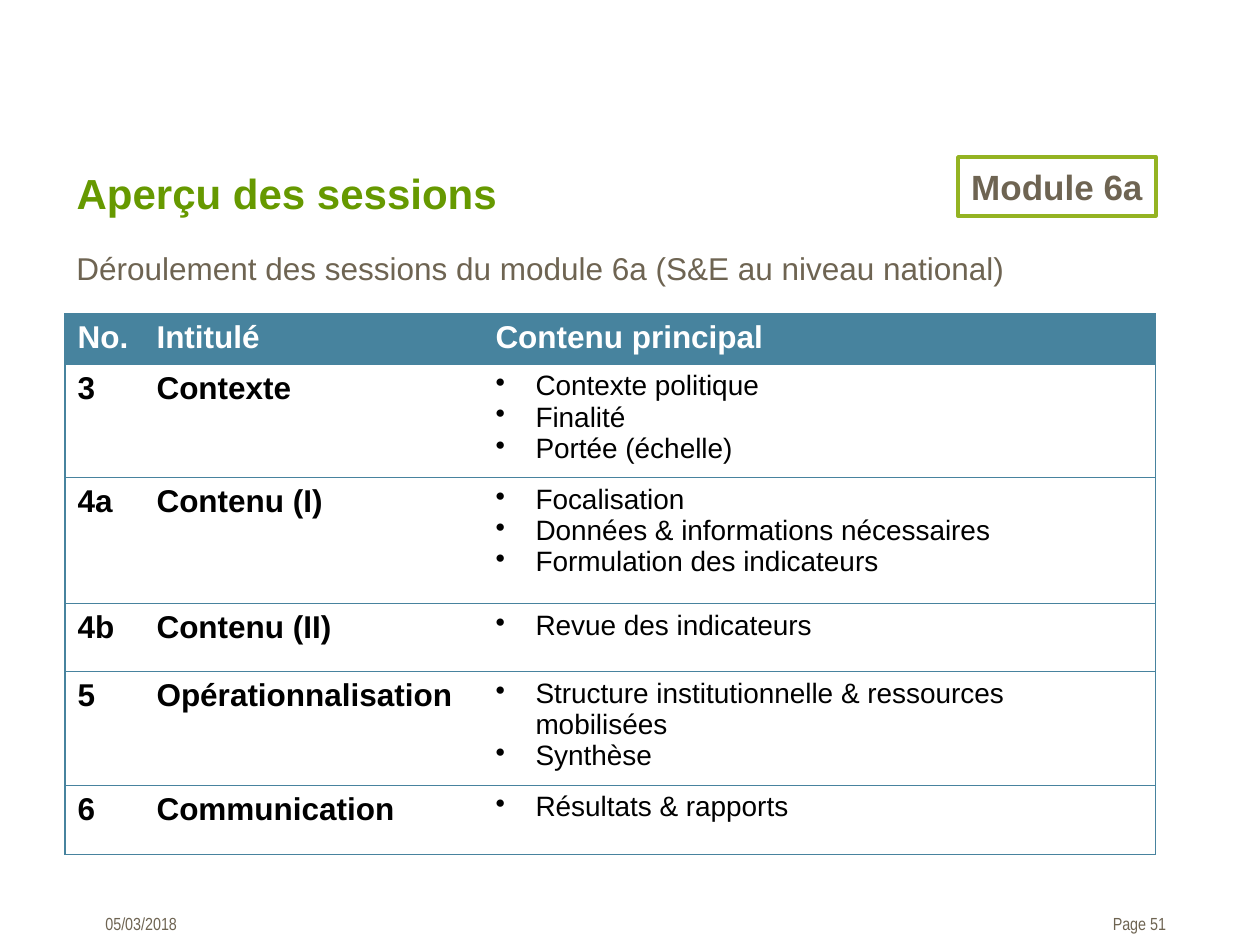
import pptx
import pptx.util
import pptx.dml.color
import pptx.enum.text
import pptx.enum.shapes
import pptx.oxml
import pptx.oxml.ns

PX = 914400 / 126
GREEN, GREY, TEAL = "669900", "6E6452", "47839E"
ALIGN = pptx.enum.text.PP_ALIGN
ANCHOR = pptx.enum.text.MSO_ANCHOR


def rgb(code):
    return pptx.dml.color.RGBColor.from_string(code)


def style(frame, size, color, bold=False, face="Arial", align=ALIGN.LEFT):
    frame.word_wrap = True
    for para in frame.paragraphs:
        para.alignment = align
        for run in para.runs:
            run.font.size = pptx.util.Pt(size)
            run.font.bold = bold
            run.font.name = face
            run.font.color.rgb = rgb(color)


deck = pptx.Presentation()
deck.slide_width = pptx.util.Inches(10)
deck.slide_height = pptx.util.Inches(7.5)
slide = deck.slides.add_slide(deck.slide_layouts[5])

title = slide.shapes.title
title.left, title.top, title.width, title.height = [
    round(n * PX) for n in (64, 161, 735, 63)]
title.text_frame.text = "Aperçu des sessions"
title.text_frame.vertical_anchor = ANCHOR.TOP
style(title.text_frame, 24, GREEN, bold=True)

# Text, box in px, size, font, alignment
labels = [
    ("Déroulement des sessions du module 6a (S&E au niveau national)",
     (64, 243, 1091, 51), 18, "Arial", ALIGN.LEFT),
    ("05/03/2018", (93, 907, 179, 34), 10, "Arial Narrow", ALIGN.LEFT),
    ("Page 51", (1038, 907, 128, 34), 10, "Arial Narrow", ALIGN.RIGHT),
]
for text, box, size, face, align in labels:
    label = slide.shapes.add_textbox(*[round(n * PX) for n in box])
    label.text_frame.text = text
    style(label.text_frame, size, GREY, face=face, align=align)
    if align == ALIGN.RIGHT:
        label.text_frame.margin_right = 0

badge = slide.shapes.add_shape(
    pptx.enum.shapes.MSO_SHAPE.RECTANGLE,
    *[round(n * PX) for n in (958, 157, 198, 59)])
badge.shadow.inherit = False
badge.fill.solid()
badge.fill.fore_color.rgb = rgb("FFFFFF")
badge.line.color.rgb = rgb("94B322")
badge.line.width = pptx.util.Pt(2)
badge.text_frame.text = "Module 6a"
badge.text_frame.vertical_anchor = ANCHOR.MIDDLE
style(badge.text_frame, 20, GREY, bold=True, align=ALIGN.CENTER)

rows = [
    ("No.", "Intitulé", "Contenu principal"),
    ("3", "Contexte", "Contexte politique\nFinalité\nPortée (échelle)"),
    ("4a", "Contenu (I)", "Focalisation\nDonnées & informations nécessaires\n"
     "Formulation des indicateurs"),
    ("4b", "Contenu (II)", "Revue des indicateurs"),
    ("5", "Opérationnalisation",
     "Structure institutionnelle & ressources mobilisées\nSynthèse"),
    ("6", "Communication", "Résultats & rapports"),
]
widths = [79, 339, 673]
heights = [50, 113, 126, 68, 93, 69]
frame = slide.shapes.add_table(
    len(rows), len(widths),
    *[round(n * PX) for n in (65, 314, sum(widths), sum(heights))])
table = frame.table
table.horz_banding = False
# Plain table style, without grid
mark = table._tbl.tblPr.find(pptx.oxml.ns.qn("a:tableStyleId"))
mark.text = "{2D5ABB26-0587-4C30-8999-92F81FD0307C}"
for col, width in zip(table.columns, widths):
    col.width = round(width * PX)
for row, height in zip(table.rows, heights):
    row.height = round(height * PX)

for r, texts in enumerate(rows):
    for c, text in enumerate(texts):
        cell = table.cell(r, c)
        cell.text_frame.text = text
        head, items = r == 0, r > 0 and c == 2
        if items:
            for para in cell.text_frame.paragraphs:
                props = para._p.get_or_add_pPr()
                props.set("marL", str(round(40 * PX)))
                props.set("indent", str(round(-40 * PX)))
                props.append(pptx.oxml.parse_xml(
                    f'<a:buChar {pptx.oxml.ns.nsdecls("a")} char="•"/>'))
        style(cell.text_frame, 16 if items else 18,
              "FFFFFF" if head else "000000", bold=not items)
        sides = ["L"] * (c == 0) + ["R"] * (c == 2) + ["T", "B"]
        for side in sides:
            cell._tc.get_or_add_tcPr().append(pptx.oxml.parse_xml(
                f'<a:ln{side} {pptx.oxml.ns.nsdecls("a")} w="9525"><a:solidFill>'
                f'<a:srgbClr val="{TEAL}"/></a:solidFill></a:ln{side}>'))
        cell.fill.solid()
        cell.fill.fore_color.rgb = rgb(TEAL if head else "FFFFFF")

deck.save("out.pptx")
